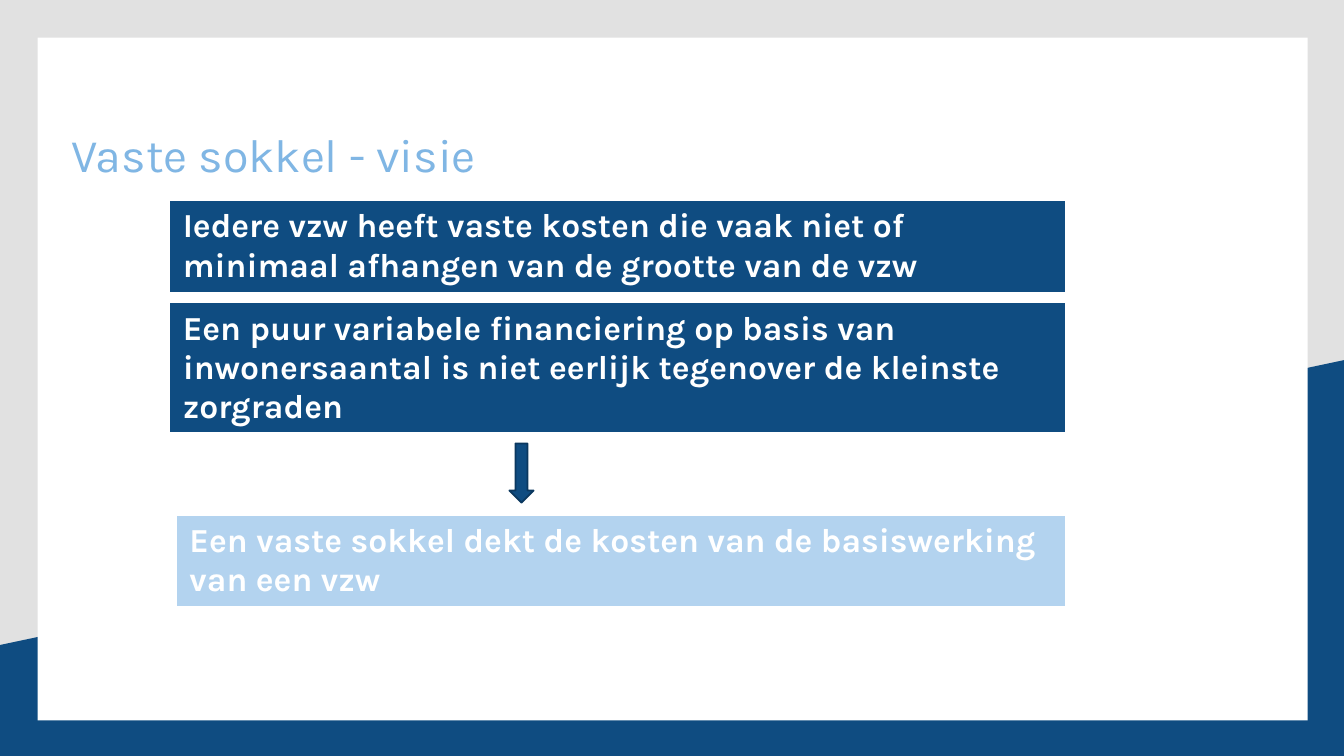
from lxml.etree import SubElement
from pptx import Presentation
from pptx.dml.color import RGBColor
from pptx.enum.shapes import MSO_SHAPE as Preset
from pptx.enum.text import MSO_ANCHOR as Anchor, PP_ALIGN as Align
from pptx.oxml.ns import qn
from pptx.util import Inches, Pt

NAVY = "0F4C81"
PALE_BLUE = "B3D3EF"
WHITE = "FFFFFF"


def paint(fill, color):
    fill.solid()
    fill.fore_color.rgb = RGBColor.from_string(color)


def style_text(paragraph, size, color, bold):
    for run in paragraph.runs:
        run.font.name = "Karla"
        run.font.size = Pt(size)
        run.font.bold = bold
        paint(run.font.fill, color)


presentation = Presentation()
presentation.slide_width = Inches(10)
presentation.slide_height = Inches(5.625)
slide = presentation.slides.add_slide(presentation.slide_layouts[5])
paint(slide.background.fill, "E1E1E1")
shapes = slide.shapes
title = shapes.title

builder = shapes.build_freeform(Inches(10), Inches(2.68))
builder.add_line_segments(
    [(Inches(x), Inches(y)) for x, y in [(10, 5.625), (0, 5.625), (0, 4.8)]], close=True
)
slope = builder.convert_to_shape()
panel = shapes.add_shape(
    Preset.RECTANGLE, Inches(0.28), Inches(0.28), Inches(9.45), Inches(5.08)
)
for shape, color in [(slope, NAVY), (panel, WHITE)]:
    shape.shadow.inherit = False
    paint(shape.fill, color)
    shape.line.fill.background()

panel.element.addnext(title.element)
title.left, title.top = Inches(0.53), Inches(0.98)
title.width, title.height = Inches(6.54), Inches(0.7)
frame = title.text_frame
frame.text = "Vaste sokkel - visie"
frame.margin_left = frame.margin_top = frame.margin_right = frame.margin_bottom = 0
frame.vertical_anchor = Anchor.TOP
frame.word_wrap = True
paragraph = frame.paragraphs[0]
paragraph.alignment = Align.LEFT
paragraph.line_spacing = 0.9
style_text(paragraph, 25, "80B6E4", False)

statements = [
    (1.26, 1.49, 6.67, 0.7, NAVY,
     "Iedere vzw heeft vaste kosten die vaak niet of minimaal afhangen van de grootte van de vzw"),
    (1.26, 2.25, 6.67, 0.98, NAVY,
     "Een puur variabele financiering op basis van inwonersaantal is niet eerlijk tegenover de kleinste zorgraden"),
    (1.31, 3.83, 6.62, 0.7, PALE_BLUE,
     "Een vaste sokkel dekt de kosten van de basiswerking van een vzw"),
]
borders = [("a:lnL", 1), ("a:lnR", 1), ("a:lnT", 1), ("a:lnB", 3)]
for left, top, width, height, color, text in statements:
    table = shapes.add_table(
        1, 1, Inches(left), Inches(top), Inches(width), Inches(height)
    ).table
    cell = table.cell(0, 0)
    cell.text_frame.text = text
    style_text(cell.text_frame.paragraphs[0], 18, WHITE, True)
    properties = cell._tc.get_or_add_tcPr()
    for tag, points in borders:
        border = SubElement(properties, qn(tag), w=str(Pt(points)))
        SubElement(SubElement(border, qn("a:solidFill")), qn("a:srgbClr"), val=WHITE)
    paint(cell.fill, color)

arrow = shapes.add_shape(
    Preset.DOWN_ARROW, Inches(3.79), Inches(3.3), Inches(0.18), Inches(0.44)
)
arrow.shadow.inherit = False
paint(arrow.fill, NAVY)
paint(arrow.line.fill, "0B385F")
arrow.line.width = Pt(1)

presentation.save("out.pptx")
